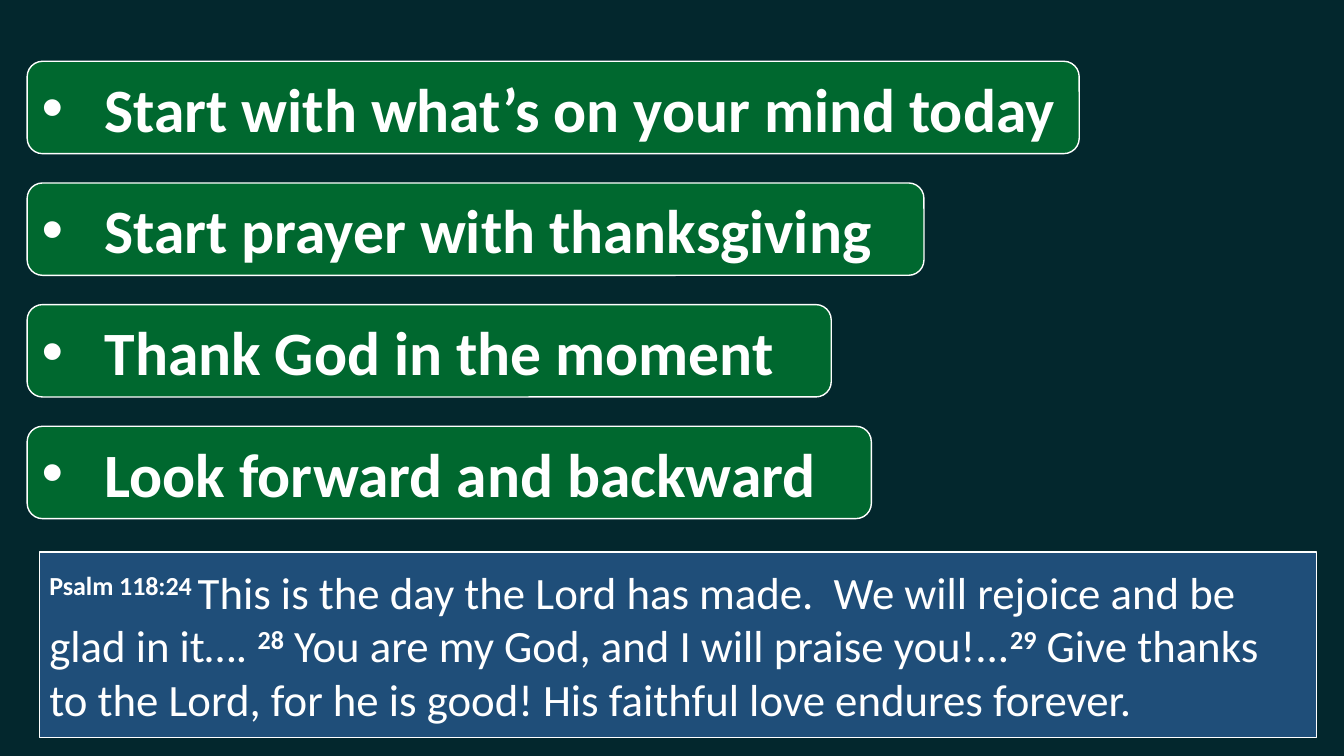
from typing import NamedTuple

from lxml import etree
from pptx import Presentation
from pptx.dml.color import RGBColor
from pptx.enum import shapes, text
from pptx.oxml import ns
from pptx.util import Pt

BACKGROUND = RGBColor(0x03, 0x27, 0x2D)
GREEN = RGBColor(0x00, 0x68, 0x2F)
BLUE = RGBColor(0x1F, 0x4E, 0x79)
WHITE = RGBColor(0xFF, 0xFF, 0xFF)
FONT = "Calibri"

POINT_LEFT, POINT_TOP, POINT_HEIGHT, POINT_STEP = 19.4, 43.8, 66, 86.9
BULLET_INDENT = Pt(45)


class Point(NamedTuple):
    wording: str
    width: float


class VersePart(NamedTuple):
    wording: str
    is_reference: bool = False


POINTS = [
    Point("Start with what’s on your mind today", 751.5),
    Point("Start prayer with thanksgiving", 640.6),
    Point("Thank God in the moment", 574.4),
    Point("Look forward and backward", 603),
]

VERSE = [
    VersePart("Psalm 118:24 ", True),
    VersePart("This is the day the Lord has made.  We will rejoice and be glad in it…. "),
    VersePart("28", True),
    VersePart(" You are my God, and I will praise you!..."),
    VersePart("29", True),
    VersePart(" Give thanks to the Lord, for he is good! His faithful love endures forever."),
]


def add_panel(slide, kind: shapes.MSO_SHAPE, left: float, top: float,
              width: float, height: float, fill: RGBColor, size: float):
    """Add a white-edged panel and return its formatted, empty paragraph."""
    shape = slide.shapes.add_shape(kind, Pt(left), Pt(top), Pt(width), Pt(height))
    shape.shadow.inherit = False
    shape.fill.solid()
    shape.fill.fore_color.rgb = fill
    shape.line.color.rgb = WHITE
    shape.line.width = Pt(1)
    frame = shape.text_frame
    frame.word_wrap = True
    frame.vertical_anchor = text.MSO_ANCHOR.MIDDLE
    paragraph = frame.paragraphs[0]
    paragraph.alignment = text.PP_ALIGN.LEFT
    paragraph.font.name = FONT
    paragraph.font.size = Pt(size)
    paragraph.font.color.rgb = WHITE
    return paragraph


def set_bullet(paragraph) -> None:
    properties = paragraph._p.get_or_add_pPr()
    properties.set("marL", str(BULLET_INDENT))
    properties.set("indent", str(-BULLET_INDENT))
    bullet_font = etree.Element(ns.qn("a:buFont"), typeface="Arial")
    bullet = etree.Element(ns.qn("a:buChar"), char="•")
    properties.insert(0, bullet_font)
    properties.insert(1, bullet)


def add_point(slide, point: Point, row: int) -> None:
    paragraph = add_panel(slide, shapes.MSO_SHAPE.ROUNDED_RECTANGLE, POINT_LEFT,
                          POINT_TOP + row * POINT_STEP, point.width,
                          POINT_HEIGHT, GREEN, 44)
    paragraph.font.bold = True
    set_bullet(paragraph)
    paragraph.add_run().text = point.wording


def add_verse(slide, parts: list[VersePart]) -> None:
    paragraph = add_panel(slide, shapes.MSO_SHAPE.RECTANGLE,
                          28.2, 394.4, 912.2, 132.6, BLUE, 32)
    for part in parts:
        run = paragraph.add_run()
        run.text = part.wording
        run.font.bold = part.is_reference
        if part.is_reference:
            run.font._element.set("baseline", "30000")


def main() -> None:
    presentation = Presentation()
    presentation.slide_width, presentation.slide_height = Pt(960), Pt(540)
    slide = presentation.slides.add_slide(presentation.slide_layouts[6])
    slide.background.fill.solid()
    slide.background.fill.fore_color.rgb = BACKGROUND
    for row, point in enumerate(POINTS):
        add_point(slide, point, row)
    add_verse(slide, VERSE)
    presentation.save("out.pptx")


if __name__ == "__main__":
    main()
